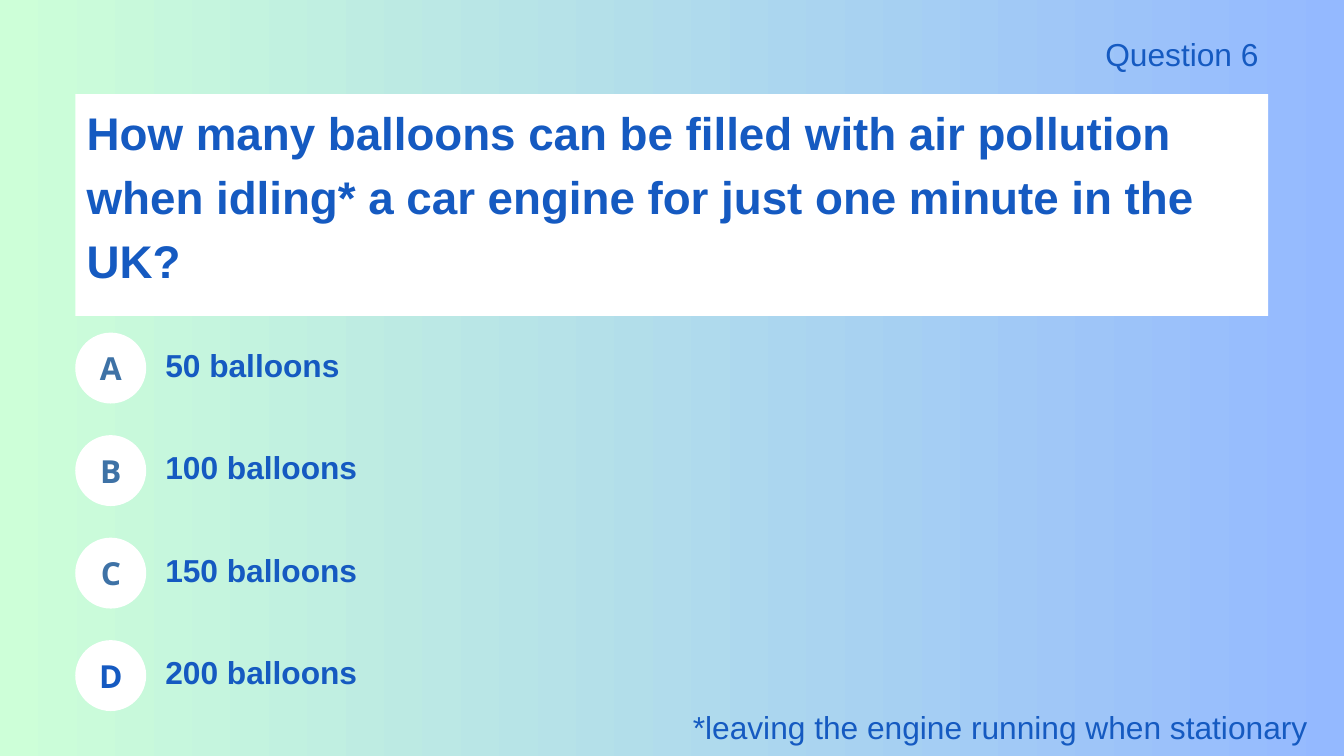
import pptx
import pptx.util
import pptx.dml.color
import pptx.enum.shapes
import pptx.enum.text

ALIGN = pptx.enum.text.PP_ALIGN
ANCHOR = pptx.enum.text.MSO_ANCHOR
SHAPE = pptx.enum.shapes.MSO_SHAPE
BLUE, STEEL, WHITE = "155AC1", "3E72A6", "FFFFFF"

prs = pptx.Presentation()
prs.slide_width = pptx.util.Inches(20)
prs.slide_height = pptx.util.Inches(11.25)
s = prs.slides.add_slide(prs.slide_layouts[6])


def rgb(value):
    return pptx.dml.color.RGBColor.from_string(value)


def place(box, text=None, size=34, color=BLUE, bold=False, font="Arial",
          align=ALIGN.LEFT, anchor=ANCHOR.TOP, inset=0):
    """Add text, or a white shape if text is a preset; box is in % of the slide."""
    x, y, w, h = box
    area = [int(prs.slide_width * x / 100), int(prs.slide_height * y / 100),
            int(prs.slide_width * w / 100), int(prs.slide_height * h / 100)]
    if isinstance(text, SHAPE):
        sp = s.shapes.add_shape(text, *area)
        sp.shadow.inherit = False
        sp.fill.solid()
        sp.fill.fore_color.rgb = rgb(WHITE)
        sp.line.fill.background()
        return
    tf = s.shapes.add_textbox(*area).text_frame
    tf.word_wrap = True
    tf.vertical_anchor = anchor
    tf.margin_left = tf.margin_right = pptx.util.Inches(inset)
    tf.margin_top = tf.margin_bottom = pptx.util.Inches(inset)
    tf.text = text
    p = tf.paragraphs[0]
    p.alignment = align
    p.line_spacing = pptx.util.Pt(size * 1.4)
    r = p.runs[0]
    r.font.name, r.font.size, r.font.bold = font, pptx.util.Pt(size), bold
    r.font.color.rgb = rgb(color)


# Background: green to blue, left to right
fill = s.background.fill
fill.gradient()
fill.gradient_angle = 0
for stop, color in zip(fill.gradient_stops, ["CDFFD8", "94B9FF"]):
    stop.color.rgb = rgb(color)

# Question number and question card
place((5.6, 12.44, 88.75, 29.33), SHAPE.RECTANGLE)
place((82, 3.82, 11.65, 6.31), "Question 6", align=ALIGN.RIGHT)
place((6.45, 12.62, 87.95, 25.96),
      "How many balloons can be filled with air pollution when idling* "
      "a car engine for just one minute in the UK?", size=49, bold=True)

# Answers: one row each, lettered circle and text
ROW_TOP, ROW_STEP = 44, 13.56
answers = [("A", "50 balloons", 80.65, STEEL), ("B", "100 balloons", 57.9, STEEL),
           ("C", "150 balloons", 87.7, STEEL), ("D", "200 balloons", 54.55, BLUE)]
for i, (letter, answer, width, color) in enumerate(answers):
    y = ROW_TOP + i * ROW_STEP
    place((5.6, y, 5.28, 9.38), SHAPE.OVAL)
    place((6.1, y + 0.1, 4.3, 8.36), letter, color=color, bold=True, font="Open Sans",
          align=ALIGN.CENTER, anchor=ANCHOR.MIDDLE, inset=0.06)
    place((12.3, y + 0.89, width, 6.31), answer, bold=True)

# Footnote
place((51.55, 92.8, 48.45, 6.31), "*leaving the engine running when stationary")

prs.save("out.pptx")
